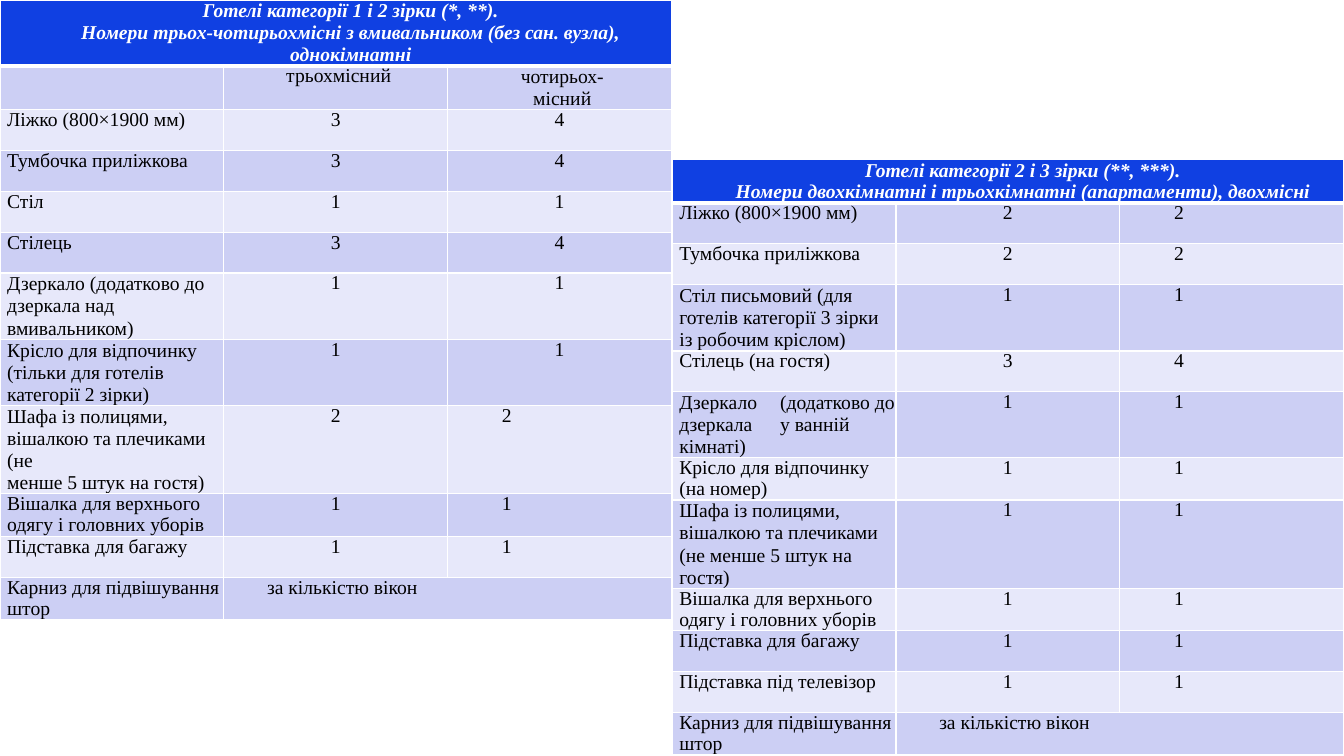
from lxml import etree
from pptx import Presentation
from pptx.dml.color import RGBColor
from pptx.enum.text import PP_ALIGN
from pptx.oxml.ns import qn
from pptx.util import Cm, Pt

CENTER, LEFT = PP_ALIGN.CENTER, PP_ALIGN.LEFT
BLUE, DARK, LIGHT, WHITE, BLACK = "1040E2", "CCCFF4", "E7E8FA", "FFFFFF", "000000"
COL_W, ROW_H = Cm(5.64), Cm(1.03)
LABEL_INDENT, NUMBER_INDENT, NOTE_INDENT = 0.18, 1.37, 1.09


def write(cell, text, leads, align=LEFT, indent=0, color=BLACK, title=False, tab=None):
    """Fill a cell: one paragraph per line of text, each with its own leading."""
    tf = cell.text_frame
    for i, (line, lead) in enumerate(zip(text.split("\n"), leads)):
        p = tf.add_paragraph() if i else tf.paragraphs[0]
        p.alignment = align
        p.line_spacing = Pt(lead)
        pPr = p._p.get_or_add_pPr()
        pPr.set("marL", str(Cm(indent)))
        pPr.set("indent", "0")
        if tab:
            tabs = etree.SubElement(pPr, qn("a:tabLst"))
            etree.SubElement(tabs, qn("a:tab"), pos=str(Cm(tab)), algn="l")
        r = p.add_run()
        r.text = line
        r.font.name = "Times New Roman"
        r.font.size = Pt(14)
        r.font.bold = r.font.italic = title
        r.font.color.rgb = RGBColor.from_string(color)


def style(cell, fill, top, bottom):
    """Set zero margins, the fill and white borders; top and bottom are in points."""
    cell.margin_left = cell.margin_right = cell.margin_top = cell.margin_bottom = 0
    cell.fill.solid()
    cell.fill.fore_color.rgb = RGBColor.from_string(fill)
    tcPr = cell._tc.get_or_add_tcPr()
    borders = [("a:lnL", 1), ("a:lnR", 1), ("a:lnT", top), ("a:lnB", bottom)]
    for i, (side, width) in enumerate(borders):
        ln = etree.Element(qn(side), w=str(Pt(width)))
        solid = etree.SubElement(ln, qn("a:solidFill"))
        etree.SubElement(solid, qn("a:srgbClr"), val=WHITE)
        tcPr.insert(i, ln)


# Each row: label, leading of its paragraphs, numbers for the two columns
low_rows = [
    ("Ліжко (800×1900 мм)", [15.1], "3", "4"),
    ("Тумбочка приліжкова", [15.2], "3", "4"),
    ("Стіл", [15.1], "1", "1"),
    ("Стілець", [15.7], "3", "4"),
    ("Дзеркало (додатково до дзеркала над вмивальником)", [15.8], "1", "1"),
    ("Крісло для відпочинку (тільки для готелів категорії 2 зірки)", [15.8], "1", "1"),
    ("Шафа із полицями, вішалкою та плечиками (не\nменше 5 штук на гостя)",
     [15.8, 15.6], "2", "2"),
    ("Вішалка для верхнього одягу і головних уборів", [15.1], "1", "1"),
    ("Підставка для багажу", [15.1], "1", "1"),
]
high_rows = [
    ("Ліжко (800×1900 мм)", [15.1], "2", "2"),
    ("Тумбочка приліжкова", [15.2], "2", "2"),
    ("Стіл письмовий (для готелів категорії 3 зірки із робочим кріслом)",
     [15.8], "1", "1"),
    ("Стілець (на гостя)", [15.1], "3", "4"),
    ("Дзеркало\t(додатково до дзеркала\tу ванній\nкімнаті)", [15.8, 15.4], "1", "1"),
    ("Крісло для відпочинку (на номер)", [15.1], "1", "1"),
    ("Шафа із полицями, вішалкою та плечиками (не менше 5 штук на гостя)",
     [15.8], "1", "1"),
    ("Вішалка для верхнього одягу і головних уборів", [15.1], "1", "1"),
    ("Підставка для багажу", [15.1], "1", "1"),
    ("Підставка під телевізор", [15.2], "1", "1"),
]
low_title = ("Готелі категорії 1 і 2 зірки (*, **).\n"
             "Номери трьох-чотирьохмісні з вмивальником (без сан. вузла), однокімнатні")
high_title = ("Готелі категорії 2 і 3 зірки (**, ***).\n"
              "Номери двохкімнатні і трьохкімнатні (апартаменти), двохмісні")

# Each table: left, top, title, title leading, rows, has column heads, centred last-column rows
tables = [
    (0, 0, low_title, [15.8, 15.6], low_rows, True, 6),
    (16.94, 4.01, high_title, [15.8, 15.4], high_rows, False, 0),
]

prs = Presentation()
prs.slide_width, prs.slide_height = Cm(33.87), Cm(19.05)
s = prs.slides.add_slide(prs.slide_layouts[6])

for left, top, title, title_leads, rows, has_heads, centred in tables:
    first = 2 if has_heads else 1
    last = first + len(rows)
    table = s.shapes.add_table(last + 1, 3, Cm(left), Cm(top),
                               COL_W * 3, ROW_H * (last + 1)).table
    table.first_row = table.horz_banding = False
    for column in table.columns:
        column.width = COL_W
    for i, row in enumerate(table.rows):
        row.height = ROW_H
        fill = BLUE if i == 0 else DARK if i % 2 else LIGHT
        for cell in row.cells:
            style(cell, fill, 3 if i == 1 else 1, 3 if i == 0 else 1)

    table.cell(0, 0).merge(table.cell(0, 2))
    write(table.cell(0, 0), title, title_leads, CENTER, 0.76, WHITE, title=True)
    if has_heads:
        write(table.cell(1, 1), "трьохмісний", [15.1], CENTER, 0.15)
        write(table.cell(1, 2), "чотирьох-\nмісний", [15.8, 15.4], CENTER, 0.14)

    for i, (label, leads, middle, right) in enumerate(rows):
        r = first + i
        number_leads = [15.1] if leads[0] == 15.8 else leads
        write(table.cell(r, 0), label, leads, indent=LABEL_INDENT,
              tab=2.54 if "\t" in label else None)
        write(table.cell(r, 1), middle, number_leads, CENTER)
        if i < centred:
            write(table.cell(r, 2), right, number_leads, CENTER)
        else:
            write(table.cell(r, 2), right, number_leads, indent=NUMBER_INDENT)

    table.cell(last, 1).merge(table.cell(last, 2))
    write(table.cell(last, 0), "Карниз для підвішування штор", [15.1], indent=LABEL_INDENT)
    write(table.cell(last, 1), "за кількістю вікон", [15.1], indent=NOTE_INDENT)

prs.save("out.pptx")
